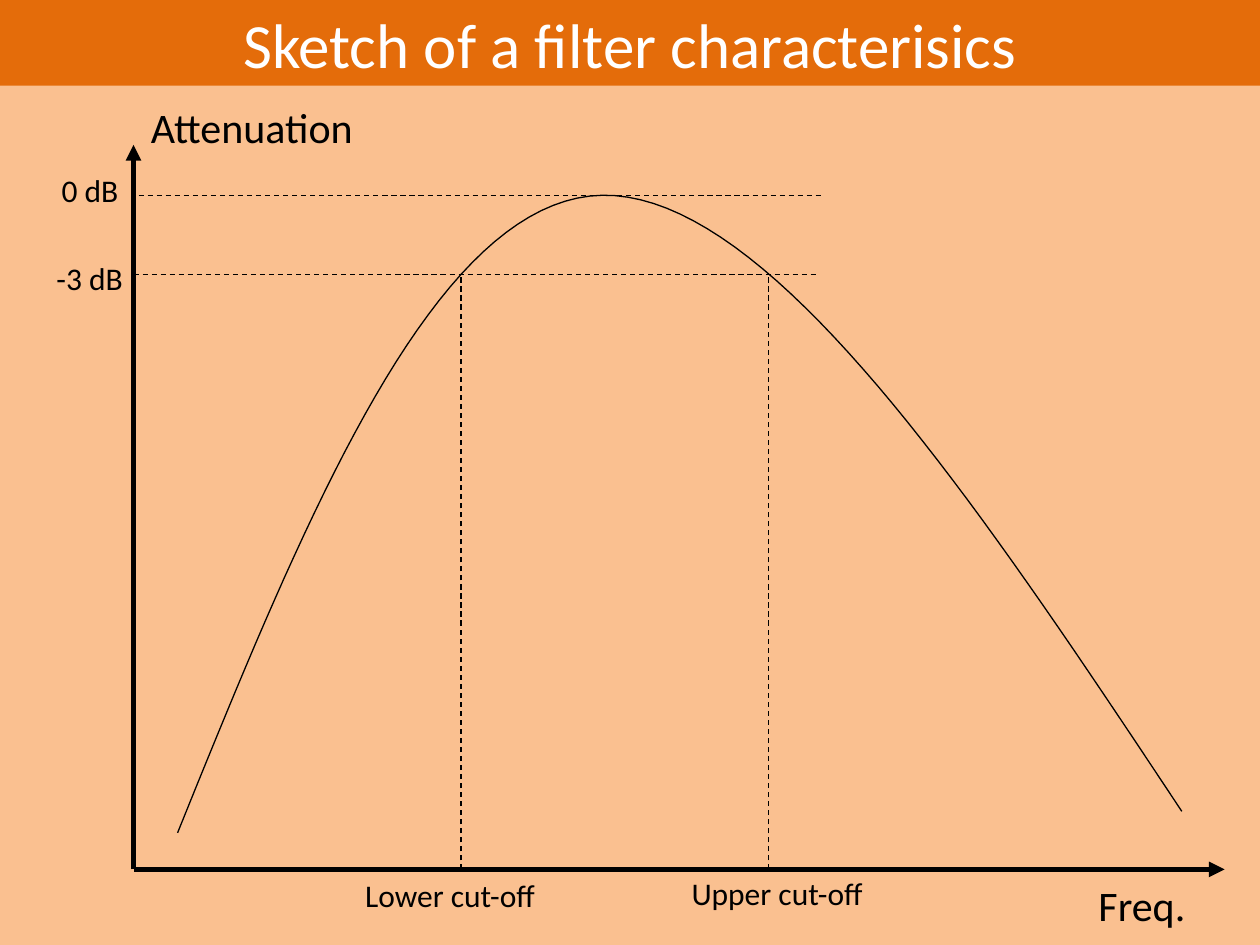
from lxml import etree
from pptx import Presentation
from pptx.dml.color import RGBColor
from pptx.enum.dml import MSO_LINE
from pptx.enum.shapes import MSO_CONNECTOR
from pptx.enum.text import MSO_ANCHOR, MSO_AUTO_SIZE, PP_ALIGN
from pptx.oxml.ns import qn
from pptx.util import Inches, Pt

STRAIGHT = MSO_CONNECTOR.STRAIGHT
DASH = MSO_LINE.DASH
GROW = MSO_AUTO_SIZE.SHAPE_TO_FIT_TEXT

PEACH = RGBColor(0xFA, 0xC0, 0x90)
ORANGE = RGBColor(0xE4, 0x6C, 0x0A)
WHITE = RGBColor(0xFF, 0xFF, 0xFF)
BLACK = RGBColor(0, 0, 0)
FONT = "Calibri"

# Content (inches)
TITLE = "Sketch of a filter characterisics"
LABEL_WIDTH = 1.97
LABELS = [  # text, left, top, height, size
    ("-3 dB", 0.35, 2.01, 0.4, 18),
    ("Freq.", 8.62, 6.93, 0.5, 24),
    ("0 dB", 0.39, 1.31, 0.4, 18),
    ("Upper cut-off", 5.39, 6.89, 0.4, 18),
    ("Lower cut-off", 2.8, 6.9, 0.4, 18),
    ("Attenuation", 1.1, 0.76, 0.5, 24),
]
ORIGIN = (1.06, 6.9)
AXIS_ENDS = [(1.06, 1.15), (9.72, 6.9)]
PEAK_Y, CUTOFF_Y = 1.55, 2.18
LOWER_X, UPPER_X = 3.66, 6.1
GUIDES = [
    ((1.1, PEAK_Y), (6.54, PEAK_Y)),
    ((ORIGIN[0], CUTOFF_Y), (6.5, CUTOFF_Y)),
    ((LOWER_X, ORIGIN[1]), (LOWER_X, CUTOFF_Y)),
    ((UPPER_X, ORIGIN[1]), (UPPER_X, CUTOFF_Y)),
]
PEAK = (4.78, PEAK_Y)
RESPONSE = [  # cubic Bézier control points: rise, then fall
    ((1.41, 6.61), (2.43, 4.09), (3.45, 1.58), PEAK),
    (PEAK, (6.11, 1.53), (7.75, 3.98), (9.38, 6.44)),
]
STEPS = 40


def format_text(paragraph, size, color):
    font_format = {"name": FONT, "size": Pt(size)}
    for attribute, value in font_format.items():
        setattr(paragraph.font, attribute, value)
    paragraph.font.color.rgb = color


def add_line(slide, start, end, width, dash=None, arrow=False):
    line = slide.shapes.add_connector(STRAIGHT, *map(Inches, start + end))
    line.line.color.rgb = BLACK
    line.line.width = Pt(width)
    if dash:
        line.line.dash_style = dash
    if arrow:
        etree.SubElement(line.line._get_or_add_ln(), qn("a:tailEnd"), type="triangle")
    etree.SubElement(line._element.spPr, qn("a:effectLst"))


def bezier_point(controls, t):
    weights = ((1 - t) ** 3, 3 * t * (1 - t) ** 2, 3 * t ** 2 * (1 - t), t ** 3)
    return tuple(Inches(sum(w * c[axis] for w, c in zip(weights, controls)))
                 for axis in (0, 1))


def main():
    prs = Presentation()
    prs.slide_width, prs.slide_height = Inches(10), Inches(7.5)
    slide = prs.slides.add_slide(prs.slide_layouts[5])
    slide.background.fill.solid()
    slide.background.fill.fore_color.rgb = PEACH

    # Title band
    title = slide.shapes.title
    band = {"left": 0, "top": 0, "width": 10, "height": 0.68}
    for attribute, value in band.items():
        setattr(title, attribute, Inches(value))
    title.fill.solid()
    title.fill.fore_color.rgb = ORANGE
    title.text_frame.text = TITLE
    title.text_frame.vertical_anchor = MSO_ANCHOR.MIDDLE
    heading = title.text_frame.paragraphs[0]
    heading.alignment = PP_ALIGN.CENTER
    format_text(heading, 36, WHITE)

    # Axes
    for axis_end in AXIS_ENDS:
        add_line(slide, ORIGIN, axis_end, 3, arrow=True)

    # Labels
    for text, left, top, height, size in LABELS:
        label = slide.shapes.add_textbox(
            *map(Inches, (left, top, LABEL_WIDTH, height))).text_frame
        label.word_wrap = True
        label.auto_size = GROW
        label.text = text
        format_text(label.paragraphs[0], size, BLACK)

    # Filter response curve
    points = [bezier_point(controls, step / STEPS)
              for controls in RESPONSE for step in range(STEPS + 1)]
    builder = slide.shapes.build_freeform(*points[0])
    builder.add_line_segments(points[1:], close=False)
    response = builder.convert_to_shape()
    response.shadow.inherit = False
    response.fill.background()
    response.line.color.rgb = BLACK
    response.line.width = Pt(0.75)

    # Level and cut-off guides
    for start, end in GUIDES:
        add_line(slide, start, end, 0.75, dash=DASH)

    prs.save("out.pptx")


if __name__ == "__main__":
    main()
